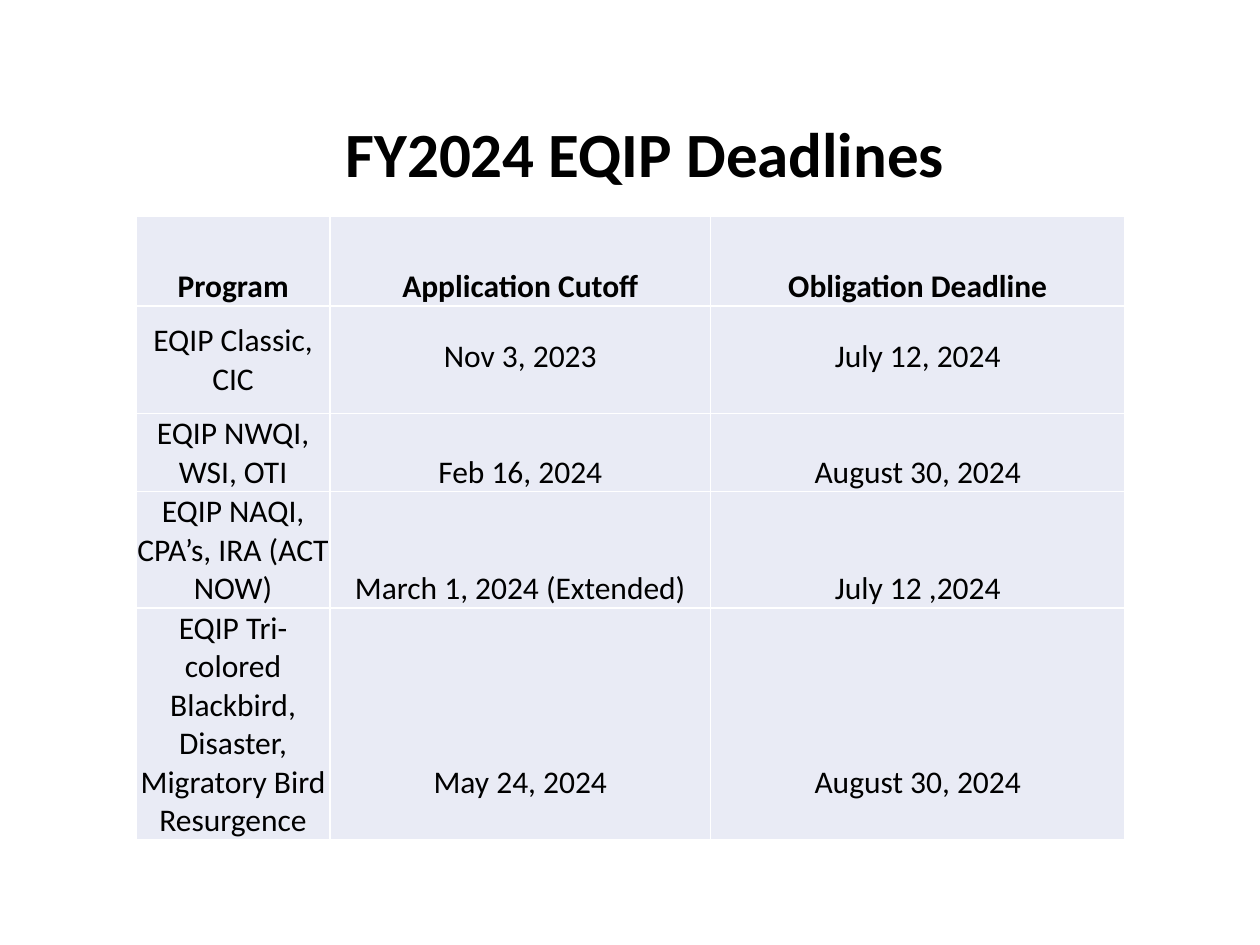
import pptx
import pptx.dml.color
import pptx.enum.text
import pptx.util
from lxml import etree
from pptx.oxml.ns import qn

Inches = pptx.util.Inches
Pt = pptx.util.Pt
ANCHOR = pptx.enum.text.MSO_ANCHOR
CENTER = pptx.enum.text.PP_ALIGN.CENTER

COLORS = {"text": "000000", "cell": "E9EBF5", "border": "FFFFFF"}

ROWS = [
    ("Program", "Application Cutoff", "Obligation Deadline"),
    ("EQIP Classic, CIC", "Nov 3, 2023", "July 12, 2024"),
    ("EQIP NWQI, WSI, OTI", "Feb 16, 2024", "August 30, 2024"),
    ("EQIP NAQI, CPA’s, IRA (ACT NOW)", "March 1, 2024 (Extended)", "July 12 ,2024"),
    ("EQIP Tri-colored Blackbird, Disaster, Migratory Bird Resurgence",
     "May 24, 2024", "August 30, 2024"),
]
COL_WIDTHS = [1.54, 3.02, 3.29]
ROW_HEIGHTS = [0.71, 0.85, 0.56, 0.84, 1.83]
RAISED_ROWS = {1, 4}  # dates sit one line above the cell bottom


def rgb(name):
    return pptx.dml.color.RGBColor.from_string(COLORS[name])


class DeadlineSlide:
    def __init__(self, prs):
        self.s = prs.slides.add_slide(prs.slide_layouts[5])
        self.font = "Calibri"

    def add_text(self, tf, text, size, bold):
        p = tf.paragraphs[0]
        p.alignment = CENTER
        r = p.add_run()
        r.text = text
        for key, value in {"name": self.font, "size": Pt(size), "bold": bold}.items():
            setattr(r.font, key, value)
        r.font.color.rgb = rgb("text")
        return p

    def title(self, text, left, top, width, height):
        sp = self.s.shapes.title
        box = {"left": left, "top": top, "width": width, "height": height}
        for key, value in box.items():
            setattr(sp, key, Inches(value))
        sp.text_frame.vertical_anchor = ANCHOR.TOP
        self.add_text(sp.text_frame, text, 36, True).line_spacing = 0.9

    def borders(self, cell):
        tc_pr = cell._tc.get_or_add_tcPr()
        for side in ("lnL", "lnR", "lnT", "lnB"):
            ln = etree.SubElement(tc_pr, qn("a:" + side), w=str(Pt(1)))
            fill = etree.SubElement(ln, qn("a:solidFill"))
            etree.SubElement(fill, qn("a:srgbClr"), val=COLORS["border"])

    def cell(self, cell, text, bold, anchor, bottom):
        margins = {"left": 0.01, "right": 0.01, "top": 0.01, "bottom": bottom}
        for side, value in margins.items():
            setattr(cell, "margin_" + side, Inches(value))
        cell.vertical_anchor = anchor
        self.borders(cell)
        cell.fill.solid()
        cell.fill.fore_color.rgb = rgb("cell")
        self.add_text(cell.text_frame, text, 18, bold)

    def table(self, rows, left, top, widths, heights):
        table = self.s.shapes.add_table(
            len(rows), len(widths), Inches(left), Inches(top),
            Inches(sum(widths)), Inches(sum(heights))).table
        table.first_row = table.horz_banding = False
        for column, width in zip(table.columns, widths):
            column.width = Inches(width)
        for row, height in zip(table.rows, heights):
            row.height = Inches(height)
        for i, row in enumerate(rows):
            for j, text in enumerate(row):
                is_program = i > 0 and j == 0
                anchor = ANCHOR.MIDDLE if is_program else ANCHOR.BOTTOM
                bottom = 0.3 if i in RAISED_ROWS and j > 0 else 0
                self.cell(table.cell(i, j), text, i == 0, anchor, bottom)


def main():
    prs = pptx.Presentation()
    prs.slide_width, prs.slide_height = Inches(10), Inches(7.5)
    slide = DeadlineSlide(prs)
    # Heading
    slide.title("FY2024 EQIP Deadlines", 0.69, 0.93, 8.86, 1.58)
    # Deadlines by program
    slide.table(ROWS, 1.08, 1.72, COL_WIDTHS, ROW_HEIGHTS)
    prs.save("out.pptx")


if __name__ == "__main__":
    main()
